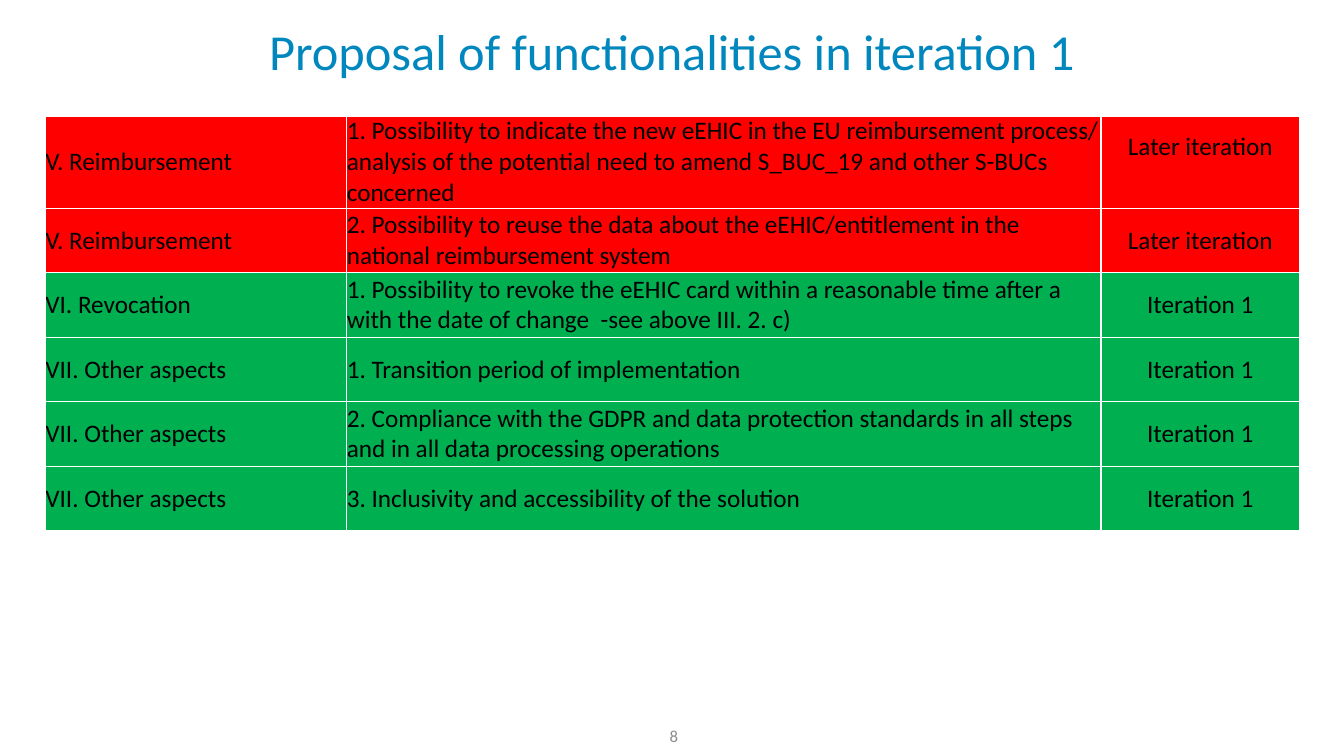
from lxml.etree import SubElement
from pptx import Presentation
from pptx.dml.color import RGBColor
from pptx.enum.text import MSO_ANCHOR, PP_ALIGN
from pptx.oxml.ns import qn
from pptx.util import Inches, Pt

FONT = "Calibri"
BLACK = RGBColor(0, 0, 0)
WHITE = RGBColor(0xFF, 0xFF, 0xFF)
TITLE_BLUE = RGBColor(0x00, 0x87, 0xBE)
NUMBER_GREY = RGBColor(0x8C, 0x8C, 0x8C)
LATER_RED = RGBColor(0xFF, 0, 0)
FIRST_GREEN = RGBColor(0x00, 0xB0, 0x50)

LATER = "Later iteration"
FIRST = "Iteration 1"
FILLS = {LATER: LATER_RED, FIRST: FIRST_GREEN}
FUNCTIONALITIES = [
    ("V. Reimbursement",
     "1. Possibility to indicate the new eEHIC in the EU reimbursement process/ "
     "analysis of the potential need to amend S_BUC_19 and other S-BUCs concerned",
     LATER),
    ("V. Reimbursement",
     "2. Possibility to reuse the data about the eEHIC/entitlement in the "
     "national reimbursement system",
     LATER),
    ("VI. Revocation",
     "1. Possibility to revoke the eEHIC card within a reasonable time after a "
     "with the date of change  -see above III. 2. c)",
     FIRST),
    ("VII. Other aspects", "1. Transition period of implementation", FIRST),
    ("VII. Other aspects",
     "2. Compliance with the GDPR and data protection standards in all steps "
     "and in all data processing operations",
     FIRST),
    ("VII. Other aspects", "3. Inclusivity and accessibility of the solution", FIRST),
]
COLUMN_WIDTHS = (2.99, 7.48, 1.97)
ROW_HEIGHT = 0.64


def write(text_frame, text, size, color, alignment):
    text_frame.text = text
    paragraph = text_frame.paragraphs[0]
    paragraph.alignment = alignment
    paragraph.font.name = FONT
    paragraph.font.size = Pt(size)
    paragraph.font.color.rgb = color


def place_title(slide, left, top, width, height):
    title = slide.shapes.title
    title.left, title.top = Inches(left), Inches(top)
    title.width, title.height = Inches(width), Inches(height)
    title.text_frame.vertical_anchor = MSO_ANCHOR.MIDDLE
    write(title.text_frame, "Proposal of functionalities in iteration 1",
          36, TITLE_BLUE, PP_ALIGN.CENTER)


def add_borders(cell, color, width):
    """Draw the four cell borders; they must precede the fill in the XML."""
    properties = cell._tc.get_or_add_tcPr()
    for side in ("a:lnL", "a:lnR", "a:lnT", "a:lnB"):
        line = SubElement(properties, qn(side), w=str(Pt(width)))
        fill = SubElement(line, qn("a:solidFill"))
        SubElement(fill, qn("a:srgbClr"), val=str(color))


def format_cell(cell, text, fill, alignment):
    cell.margin_left = cell.margin_right = cell.margin_top = cell.margin_bottom = 0
    cell.vertical_anchor = MSO_ANCHOR.MIDDLE
    add_borders(cell, WHITE, 1)
    cell.fill.solid()
    cell.fill.fore_color.rgb = fill
    write(cell.text_frame, text, 18, BLACK, alignment)


def add_functionality_table(slide, left, top, width, height):
    frame = slide.shapes.add_table(
        len(FUNCTIONALITIES), len(COLUMN_WIDTHS),
        Inches(left), Inches(top), Inches(width), Inches(height))
    table = frame.table
    table.first_row = table.horz_banding = False
    for column, column_width in zip(table.columns, COLUMN_WIDTHS):
        column.width = Inches(column_width)
    alignments = (PP_ALIGN.LEFT, PP_ALIGN.LEFT, PP_ALIGN.CENTER)
    for row, texts in zip(table.rows, FUNCTIONALITIES):
        row.height = Inches(ROW_HEIGHT)
        for cell, text, alignment in zip(row.cells, texts, alignments):
            format_cell(cell, text, FILLS[texts[-1]], alignment)
    # The first status sits half a line above the middle of its tall row.
    table.cell(0, 2).margin_bottom = Inches(0.3)
    frame.height = Inches(height)


def add_page_number(slide, left, top, width, height):
    box = slide.shapes.add_textbox(
        Inches(left), Inches(top), Inches(width), Inches(height))
    box.text_frame.word_wrap = True
    box.text_frame.vertical_anchor = MSO_ANCHOR.MIDDLE
    write(box.text_frame, "8", 12, NUMBER_GREY, PP_ALIGN.CENTER)


def main():
    presentation = Presentation()
    presentation.slide_width = Inches(13.33)
    presentation.slide_height = Inches(7.5)
    slide = presentation.slides.add_slide(presentation.slide_layouts[5])
    place_title(slide, 0.21, 0, 12.91, 0.99)
    add_functionality_table(slide, 0.45, 1.15, sum(COLUMN_WIDTHS), 4.09)
    add_page_number(slide, 5.13, 7.14, 3.11, 0.32)
    presentation.save("out.pptx")


if __name__ == "__main__":
    main()
